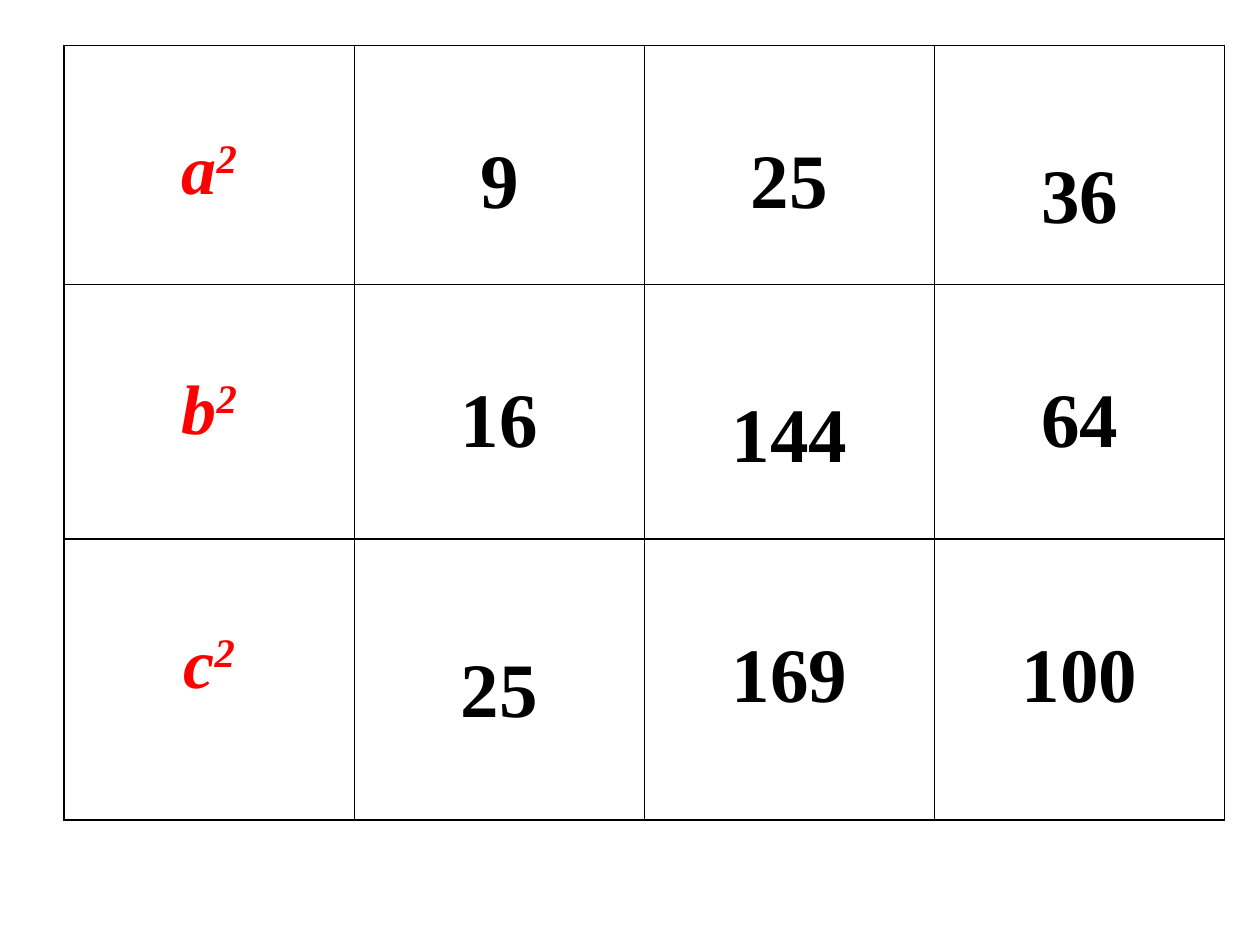
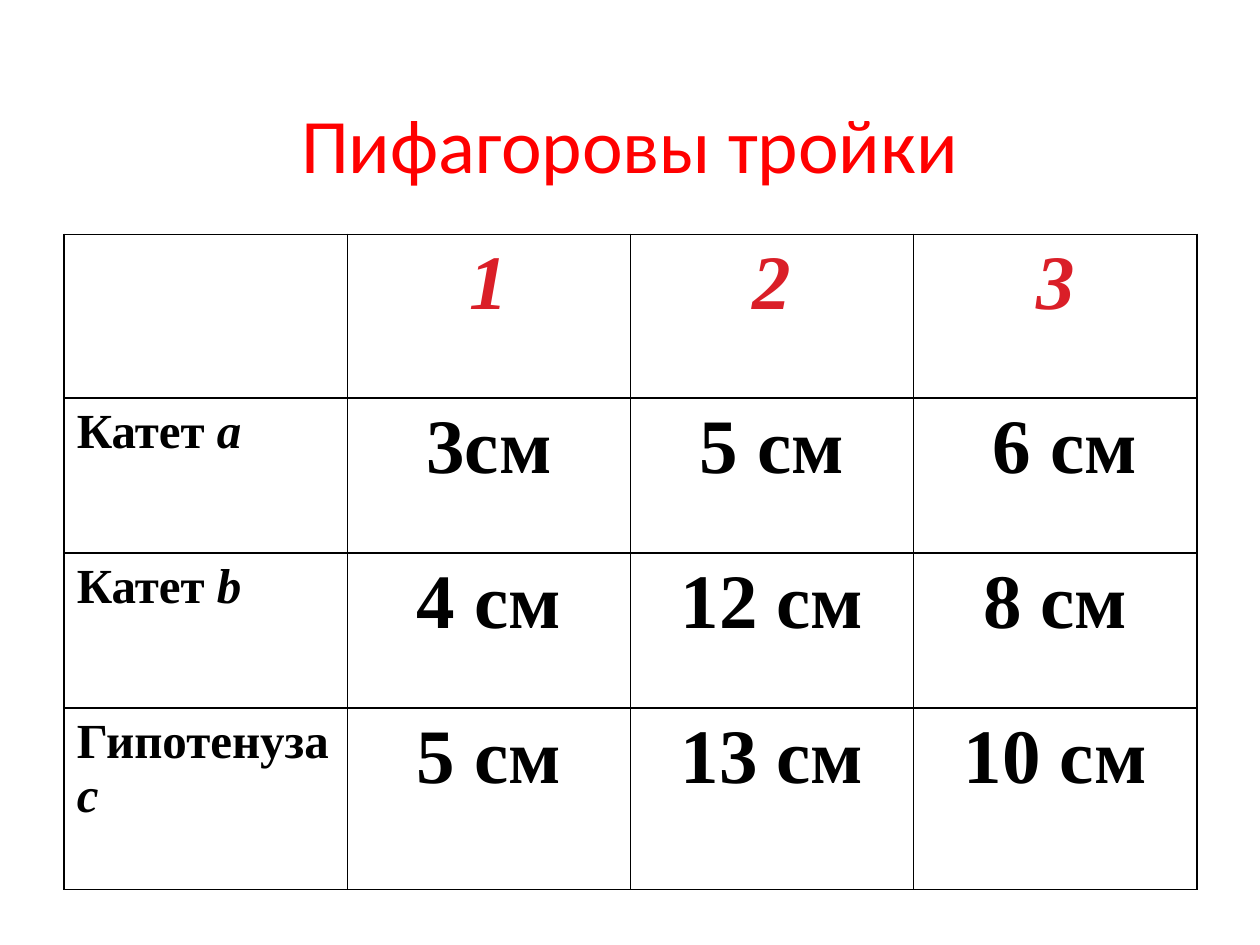
import dataclasses

import lxml.etree
import pptx
import pptx.dml.color
import pptx.enum.text
import pptx.oxml.ns
import pptx.util

Inches = pptx.util.Inches
ALIGN = pptx.enum.text.PP_ALIGN
ANCHOR = pptx.enum.text.MSO_ANCHOR


@dataclasses.dataclass(frozen=True)
class Theme:
    white: str = "FFFFFF"
    black: str = "000000"
    red: str = "FF0000"
    crimson: str = "DA1F28"
    title_font: str = "Calibri"
    table_font: str = "Times New Roman"
    value_size: int = 44
    symbol_size: int = 40
    label_size: int = 28
    border: float = 1
    cell_top: float = 0.05


THEME = Theme()


def format_run(r, size, color, font=THEME.table_font, bold=True, italic=False):
    r.font.size = pptx.util.Pt(size)
    r.font.name = font
    r.font.bold = bold
    r.font.italic = italic
    r.font.color.rgb = pptx.dml.color.RGBColor.from_string(color)


def add_run(cell, text, size, color=THEME.black, italic=False, align=ALIGN.CENTER):
    p = cell.text_frame.paragraphs[0]
    p.alignment = align
    r = p.add_run()
    r.text = text
    format_run(r, size, color, italic=italic)
    return r


def add_borders(cell):
    tc_pr = cell._tc.get_or_add_tcPr()
    for i, side in enumerate(("lnL", "lnR", "lnT", "lnB")):
        ln = lxml.etree.Element(pptx.oxml.ns.qn(f"a:{side}"))
        ln.set("w", str(pptx.util.Pt(THEME.border)))
        fill = lxml.etree.SubElement(ln, pptx.oxml.ns.qn("a:solidFill"))
        lxml.etree.SubElement(fill, pptx.oxml.ns.qn("a:srgbClr")).set("val", THEME.black)
        tc_pr.insert(i, ln)


def add_grid(s, left, top, width, row_heights, cols=4):
    frame = s.shapes.add_table(len(row_heights), cols, Inches(left), Inches(top),
                               Inches(width), Inches(sum(row_heights)))
    table = frame.table
    table.first_row = table.horz_banding = False
    for column in table.columns:
        column.width = Inches(width / cols)
    for row, height in zip(table.rows, row_heights):
        row.height = Inches(height)
        for cell in row.cells:
            cell.fill.solid()
            cell.fill.fore_color.rgb = pptx.dml.color.RGBColor.from_string(THEME.white)
            add_borders(cell)
    return table


def add_title(s, text, left, top, width, height):
    tf = s.shapes.add_textbox(Inches(left), Inches(top), Inches(width), Inches(height)).text_frame
    tf.word_wrap = True
    tf.vertical_anchor = ANCHOR.BOTTOM
    tf.text = text
    p = tf.paragraphs[0]
    p.alignment = ALIGN.CENTER
    format_run(p.runs[0], THEME.value_size, THEME.red, THEME.title_font, bold=False)


def add_squares_table(s, left, top, width, row_heights):
    rows = (("a", "9", "25", "36"), ("b", "16", "144", "64"), ("с", "25", "169", "100"))
    symbol_drop, value_drop, diagonal_drop = 0.64, 0.7, 0.12
    table = add_grid(s, left, top, width, row_heights)
    for i, (symbol, *values) in enumerate(rows):
        cell = table.cell(i, 0)
        cell.margin_top = Inches(THEME.cell_top + symbol_drop)
        add_run(cell, symbol, THEME.symbol_size, THEME.red, italic=True)
        power = add_run(cell, "2", THEME.symbol_size, THEME.red, italic=True)
        power.font._element.set("baseline", "30000")
        for j, value in enumerate(values, 1):
            cell = table.cell(i, j)
            on_diagonal = i + j == len(rows)
            drop = value_drop + (diagonal_drop if on_diagonal else 0)
            cell.margin_top = Inches(THEME.cell_top + drop)
            add_run(cell, value, THEME.value_size)


def add_triples_table(s, left, top, width, row_heights):
    rows = (("Катет ", "a", "3см", "5 см", " 6 см"),
            ("Катет ", "b", "4 см", "12 см", "8 см"),
            ("Гипотенуза ", "с", "5 см", "13 см", "10 см"))
    table = add_grid(s, left, top, width, row_heights)
    for j in range(1, 4):
        add_run(table.cell(0, j), str(j), THEME.value_size, THEME.crimson, italic=True)
    for i, (label, symbol, *lengths) in enumerate(rows, 1):
        add_run(table.cell(i, 0), label, THEME.label_size, align=ALIGN.LEFT)
        add_run(table.cell(i, 0), symbol, THEME.label_size, italic=True, align=ALIGN.LEFT)
        for j, length in enumerate(lengths, 1):
            add_run(table.cell(i, j), length, THEME.value_size)


def add_blank_slide(prs):
    s = prs.slides.add_slide(prs.slide_layouts[6])
    s.background.fill.solid()
    s.background.fill.fore_color.rgb = pptx.dml.color.RGBColor.from_string(THEME.white)
    return s


def main():
    prs = pptx.Presentation()
    prs.slide_width, prs.slide_height = Inches(10), Inches(7.5)
    add_squares_table(add_blank_slide(prs), 0.51, 0.36, 9.21, (1.9, 2.02, 2.23))
    s = add_blank_slide(prs)
    add_title(s, "Пифагоровы тройки", 0.5, 0.3, 9, 1.25)
    add_triples_table(s, 0.51, 1.86, 8.99, (1.3, 1.23, 1.23, 1.44))
    prs.save("out.pptx")


if __name__ == "__main__":
    main()
